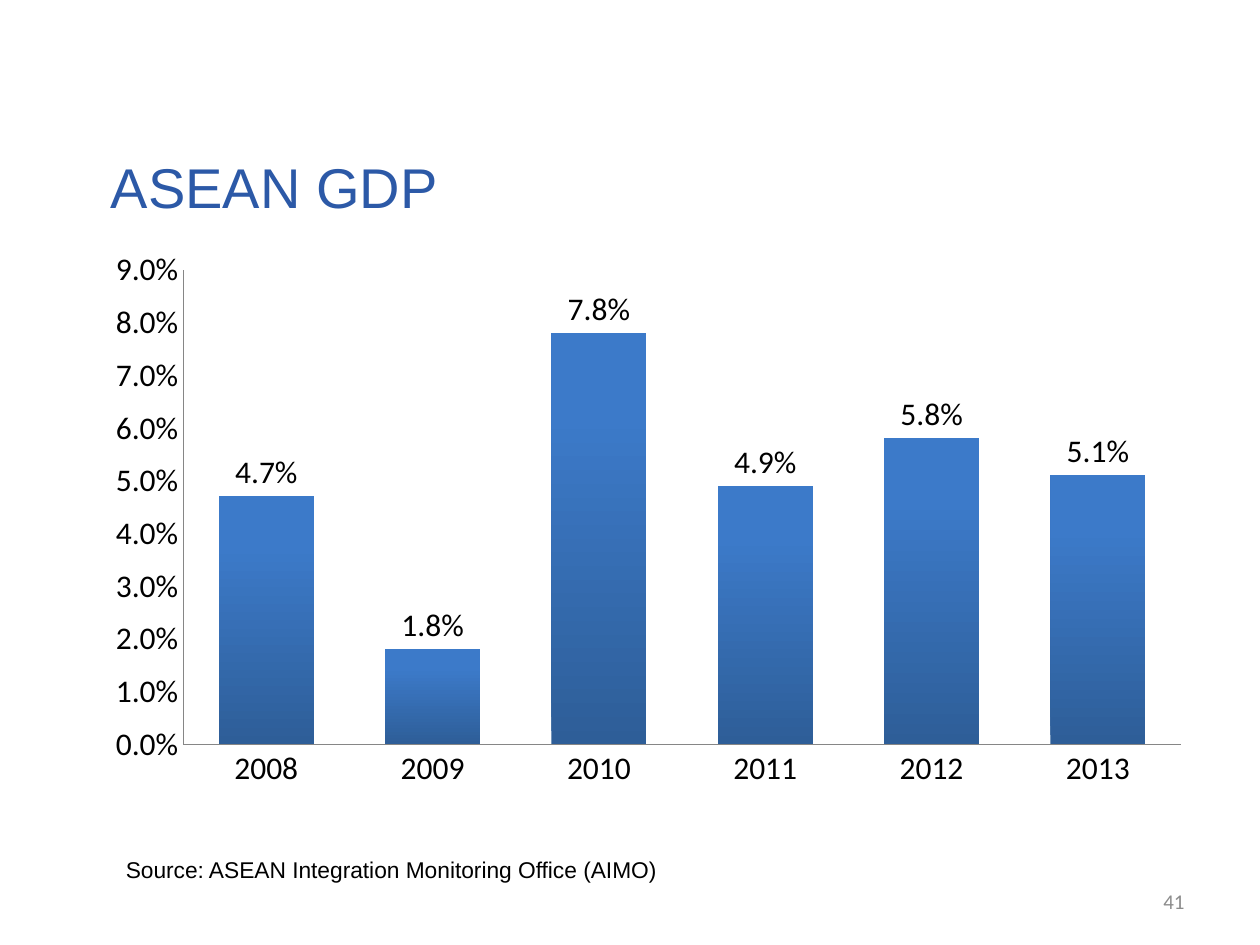
from dataclasses import dataclass

from lxml.etree import SubElement
from pptx import Presentation
from pptx.chart.axis import _BaseAxis as Axis
from pptx.chart.chart import Chart
from pptx.chart.data import CategoryChartData
from pptx.dml.color import RGBColor
from pptx.enum.chart import XL_CHART_TYPE as ChartType
from pptx.enum.chart import XL_LABEL_POSITION as LabelPosition
from pptx.enum.chart import XL_TICK_MARK as TickMark
from pptx.enum.text import MSO_ANCHOR as Anchor
from pptx.enum.text import PP_ALIGN as Align
from pptx.oxml.ns import qn
from pptx.slide import Slide
from pptx.text.text import TextFrame
from pptx.util import Inches, Pt

WIDTH, HEIGHT = Inches(10), Inches(7.5)


@dataclass(frozen=True)
class Theme:
    title: str = "2C59A7"
    ink: str = "000000"
    muted: str = "8C8C8C"
    axis: str = "868686"
    bar_top: str = "3C7AC9"
    bar_base: str = "2E5E98"
    heading_font: str = "Arial"
    chart_font: str = "Calibri"
    title_size: float = 32
    chart_size: float = 18
    source_size: float = 13
    number_size: float = 12


@dataclass(frozen=True)
class Box:
    """A place on the slide, in percent of its width and height."""
    left: float
    top: float
    width: float
    height: float

    def emu(self) -> tuple[int, int, int, int]:
        return (int(WIDTH * self.left / 100), int(HEIGHT * self.top / 100),
                int(WIDTH * self.width / 100), int(HEIGHT * self.height / 100))


@dataclass(frozen=True)
class Label:
    text: str
    size: float
    font: str
    color: str
    align: Align = Align.LEFT
    anchor: Anchor = Anchor.MIDDLE
    wrap: bool = True


THEME = Theme()
GROWTH = {"2008": 0.047, "2009": 0.018, "2010": 0.078,
          "2011": 0.049, "2012": 0.058, "2013": 0.051}
PLOT_SHARES = {"x": 0.08, "y": 0.05, "w": 0.9, "h": 0.85}


def rgb(color: str) -> RGBColor:
    return RGBColor.from_string(color)


def write(frame: TextFrame, label: Label) -> None:
    frame.text = label.text
    frame.word_wrap = label.wrap
    frame.vertical_anchor = label.anchor
    line = frame.paragraphs[0]
    line.alignment = label.align
    line.font.size = Pt(label.size)
    line.font.name = label.font
    line.font.color.rgb = rgb(label.color)


def add_label(slide: Slide, box: Box, label: Label) -> None:
    write(slide.shapes.add_textbox(*box.emu()).text_frame, label)


def style_axis(axis: Axis) -> None:
    axis.has_major_gridlines = False
    axis.major_tick_mark = axis.minor_tick_mark = TickMark.NONE
    axis.format.line.color.rgb = rgb(THEME.axis)
    axis.format.line.width = Pt(0.75)


def place_plot(chart: Chart) -> None:
    """Fix the inner plot area as shares of the chart frame."""
    plot_area = chart.plots[0]._element.getparent()
    layout = plot_area.find(qn("c:layout"))
    if layout is None:
        layout = SubElement(plot_area, qn("c:layout"))
        plot_area.insert(0, layout)
    manual = SubElement(layout, qn("c:manualLayout"))
    settings = {"layoutTarget": "inner", "xMode": "edge", "yMode": "edge", **PLOT_SHARES}
    for tag, value in settings.items():
        SubElement(manual, qn(f"c:{tag}")).set("val", str(value))


def add_growth_chart(slide: Slide, box: Box) -> None:
    growth = CategoryChartData(number_format="0.0%")
    growth.categories = list(GROWTH)
    growth.add_series("Series 1", list(GROWTH.values()))
    chart = slide.shapes.add_chart(ChartType.COLUMN_CLUSTERED, *box.emu(), growth).chart
    chart.has_legend = chart.has_title = False
    chart.font.name = THEME.chart_font
    chart.font.size = Pt(THEME.chart_size)
    chart.font.color.rgb = rgb(THEME.ink)

    # Axes
    style_axis(chart.category_axis)
    style_axis(chart.value_axis)
    chart.value_axis.minimum_scale = 0
    chart.value_axis.maximum_scale = 0.09
    chart.value_axis.major_unit = 0.01
    chart.value_axis.tick_labels.number_format = "0.0%"
    chart.value_axis.tick_labels.number_format_is_linked = False

    # Bars, shaded from base to top
    bars = chart.plots[0]
    bars.gap_width = 75
    bars.vary_by_categories = False
    fill = bars.series[0].format.fill
    fill.gradient()
    fill.gradient_angle = 90
    for stop, color, position in zip(fill.gradient_stops,
                                     (THEME.bar_base, THEME.bar_top), (0, 0.8)):
        stop.color.rgb = rgb(color)
        stop.position = position

    # Value labels
    bars.has_data_labels = True
    values = bars.data_labels
    values.show_value = True
    values.number_format = "0.0%"
    values.number_format_is_linked = False
    values.position = LabelPosition.OUTSIDE_END
    place_plot(chart)


def main() -> None:
    deck = Presentation()
    deck.slide_width, deck.slide_height = WIDTH, HEIGHT
    slide = deck.slides.add_slide(deck.slide_layouts[5])

    # Title
    title = slide.shapes.title
    title.left, title.top, title.width, title.height = Box(7.8, 14.53, 78.1, 10.27).emu()
    write(title.text_frame,
          Label("ASEAN GDP", THEME.title_size, THEME.heading_font, THEME.title))

    # Chart
    add_growth_chart(slide, Box(7.5, 25.6, 88, 59.07))

    # Source and page number
    add_label(slide, Box(9, 89.87, 44.7, 4.27),
              Label("Source: ASEAN Integration Monitoring Office (AIMO)", THEME.source_size,
                    THEME.heading_font, THEME.ink, anchor=Anchor.TOP, wrap=False))
    add_label(slide, Box(71.7, 92.67, 23.3, 5.33),
              Label("41", THEME.number_size, THEME.chart_font, THEME.muted, Align.RIGHT))

    deck.save("out.pptx")


if __name__ == "__main__":
    main()
